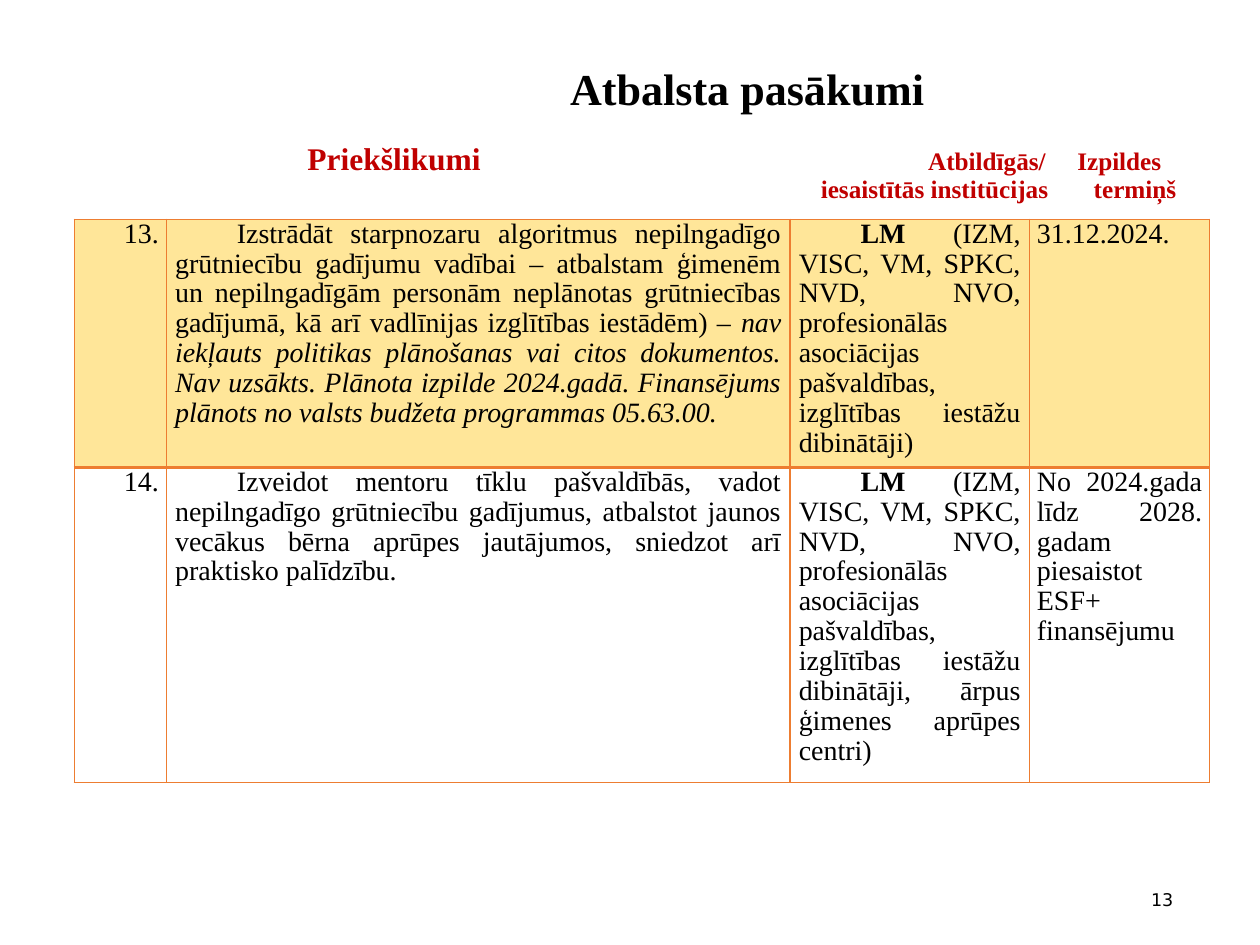
from dataclasses import dataclass
from typing import NamedTuple

from lxml.etree import SubElement
from pptx import Presentation
from pptx.dml.color import RGBColor
from pptx.enum.text import MSO_ANCHOR, MSO_AUTO_SIZE, PP_ALIGN
from pptx.oxml.ns import qn
from pptx.util import Inches, Pt


@dataclass(frozen=True)
class Theme:
    serif: str = "Times New Roman"
    sans: str = "DejaVu Sans"
    ink: str = "000000"
    heading: str = "C00000"
    border: str = "ED7D31"
    highlight: str = "FFE699"
    title_size: float = 25.2
    lead_size: float = 18
    heading_size: float = 14.4
    cell_size: float = 16
    number_size: float = 10


class Span(NamedTuple):
    text: str
    size: float = 16
    color: str = "000000"
    bold: bool = False
    italic: bool = False
    face: str = "Times New Roman"


class Tab(NamedTuple):
    position: float
    align: str


class Measure(NamedTuple):
    number: str
    proposal: list[Span]
    institutions: list[Span]
    deadline: str
    fill: str | None
    height: float


THEME = Theme()
COLUMN_WIDTHS = (0.73, 4.95, 1.9, 1.43)
FIRST_LINE_INDENT = 0.49
PARTNERS = (" (IZM, VISC, VM, SPKC, NVD, NVO, profesionālās asociācijas "
            "pašvaldības, izglītības iestāžu dibinātāji")

MEASURES = [
    Measure(
        "13.",
        [Span("Izstrādāt starpnozaru algoritmus nepilngadīgo grūtniecību gadījumu "
              "vadībai – atbalstam ģimenēm un nepilngadīgām personām neplānotas "
              "grūtniecības gadījumā, kā arī vadlīnijas izglītības iestādēm) – "),
         Span("nav iekļauts politikas plānošanas vai citos dokumentos. Nav uzsākts. "
              "Plānota izpilde 2024.gadā. Finansējums plānots no valsts budžeta "
              "programmas 05.63.00.", italic=True)],
        [Span("LM", bold=True), Span(PARTNERS + ")")],
        "31.12.2024.", THEME.highlight, 1.97),
    Measure(
        "14.",
        [Span("Izveidot mentoru tīklu pašvaldībās, vadot nepilngadīgo grūtniecību "
              "gadījumus, atbalstot jaunos vecākus bērna aprūpes jautājumos, "
              "sniedzot arī praktisko palīdzību.")],
        [Span("LM", bold=True), Span(PARTNERS + ", ārpus ģimenes aprūpes centri)")],
        "No 2024.gada līdz 2028. gadam piesaistot ESF+ finansējumu", None, 2.5),
]


def apply_format(target, values: dict) -> None:
    for name, value in values.items():
        setattr(target, name, value)


def write(paragraph, spans: list[Span], align: PP_ALIGN, spacing: float = 1.0,
          before: float = 0, indent: float = 0, tabs: tuple[Tab, ...] = ()) -> None:
    properties = paragraph._p.get_or_add_pPr()
    if indent:
        properties.set("indent", str(Inches(indent)))
    if tabs:
        tab_list = SubElement(properties, qn("a:tabLst"))
        for tab in tabs:
            SubElement(tab_list, qn("a:tab"), pos=str(Inches(tab.position)), algn=tab.align)
    apply_format(paragraph, {"alignment": align, "line_spacing": spacing,
                             "space_before": Pt(before)})
    for span in spans:
        run = paragraph.add_run()
        run.text = span.text
        apply_format(run.font, {"name": span.face, "size": Pt(span.size),
                                "bold": span.bold, "italic": span.italic})
        run.font.color.rgb = RGBColor.from_string(span.color)


def draw_title(page) -> None:
    box = page.shapes.title
    apply_format(box, {"left": Inches(2.27), "top": Inches(0.45),
                       "width": Inches(7.32), "height": Inches(1.12)})
    frame = box.text_frame
    apply_format(frame, {"margin_left": Inches(0.17), "margin_right": Inches(0.17),
                         "margin_top": Inches(0.04), "margin_bottom": 0,
                         "vertical_anchor": MSO_ANCHOR.TOP, "word_wrap": True,
                         "auto_size": MSO_AUTO_SIZE.NONE})
    write(frame.paragraphs[0],
          [Span("Atbalsta pasākumi", THEME.title_size, THEME.ink, bold=True)],
          PP_ALIGN.CENTER)
    # Column headings line up with the table through tab stops
    small = (THEME.heading_size, THEME.heading, True)
    write(frame.add_paragraph(),
          [Span("Priekšlikumi", THEME.lead_size, THEME.heading, bold=True),
           Span("\tAtbildīgās/\tIzpildes", *small)],
          PP_ALIGN.LEFT, before=14, tabs=(Tab(5.86, "r"), Tab(6.11, "l")))
    write(frame.add_paragraph(),
          [Span("\tiesaistītās institūcijas\ttermiņš", *small)],
          PP_ALIGN.LEFT, spacing=0.9, tabs=(Tab(5.88, "r"), Tab(6.24, "l")))


def set_borders(cell, widths: dict[str, float]) -> None:
    properties = cell._tc.get_or_add_tcPr()
    for position, (side, width) in enumerate(widths.items()):
        line = SubElement(properties, qn(f"a:{side}"), w=str(Pt(width)))
        fill = SubElement(line, qn("a:solidFill"))
        SubElement(fill, qn("a:srgbClr"), val=THEME.border)
        properties.insert(position, line)


def fill_cell(cell, spans: list[Span], align: PP_ALIGN, margin: float,
              indent: float, fill: str | None) -> None:
    apply_format(cell, {"margin_left": Inches(margin), "margin_right": Inches(margin),
                        "margin_top": 0, "margin_bottom": 0,
                        "vertical_anchor": MSO_ANCHOR.TOP})
    write(cell.text_frame.paragraphs[0], spans, align, spacing=0.96, indent=indent)
    if fill:
        cell.fill.solid()
        cell.fill.fore_color.rgb = RGBColor.from_string(fill)
    else:
        cell.fill.background()


def draw_table(page, measures: list[Measure]) -> None:
    height = sum(measure.height for measure in measures)
    table = page.shapes.add_table(len(measures), len(COLUMN_WIDTHS), Inches(0.59),
                                  Inches(1.74), Inches(sum(COLUMN_WIDTHS)),
                                  Inches(height)).table
    apply_format(table, {"first_row": False, "horz_banding": False})
    for column, width in zip(table.columns, COLUMN_WIDTHS):
        column.width = Inches(width)
    last = len(measures) - 1
    for index, measure in enumerate(measures):
        table.rows[index].height = Inches(measure.height)
        contents = (
            ([Span(measure.number)], PP_ALIGN.RIGHT, 0.06, 0),
            (measure.proposal, PP_ALIGN.JUSTIFY, 0.07, FIRST_LINE_INDENT),
            (measure.institutions, PP_ALIGN.JUSTIFY, 0.07, FIRST_LINE_INDENT),
            ([Span(measure.deadline)], PP_ALIGN.JUSTIFY, 0.06, 0),
        )
        # The rule between rows is heavier than the frame
        borders = {"lnL": 1, "lnR": 1, "lnT": 2 if index else 1,
                   "lnB": 2 if index < last else 1}
        for cell, content in zip(table.rows[index].cells, contents):
            fill_cell(cell, *content, measure.fill)
            set_borders(cell, borders)


def draw_page_number(page, number: str) -> None:
    box = page.shapes.add_textbox(Inches(8.56), Inches(6.94), Inches(0.85), Inches(0.4))
    apply_format(box.text_frame, {"word_wrap": True, "vertical_anchor": MSO_ANCHOR.MIDDLE})
    write(box.text_frame.paragraphs[0],
          [Span(number, THEME.number_size, THEME.ink, face=THEME.sans)], PP_ALIGN.RIGHT)


def main() -> None:
    deck = Presentation()
    apply_format(deck, {"slide_width": Inches(10), "slide_height": Inches(7.5)})
    page = deck.slides.add_slide(deck.slide_layouts.get_by_name("Title Only"))
    draw_title(page)
    draw_table(page, MEASURES)
    draw_page_number(page, "13")
    deck.save("out.pptx")


if __name__ == "__main__":
    main()
